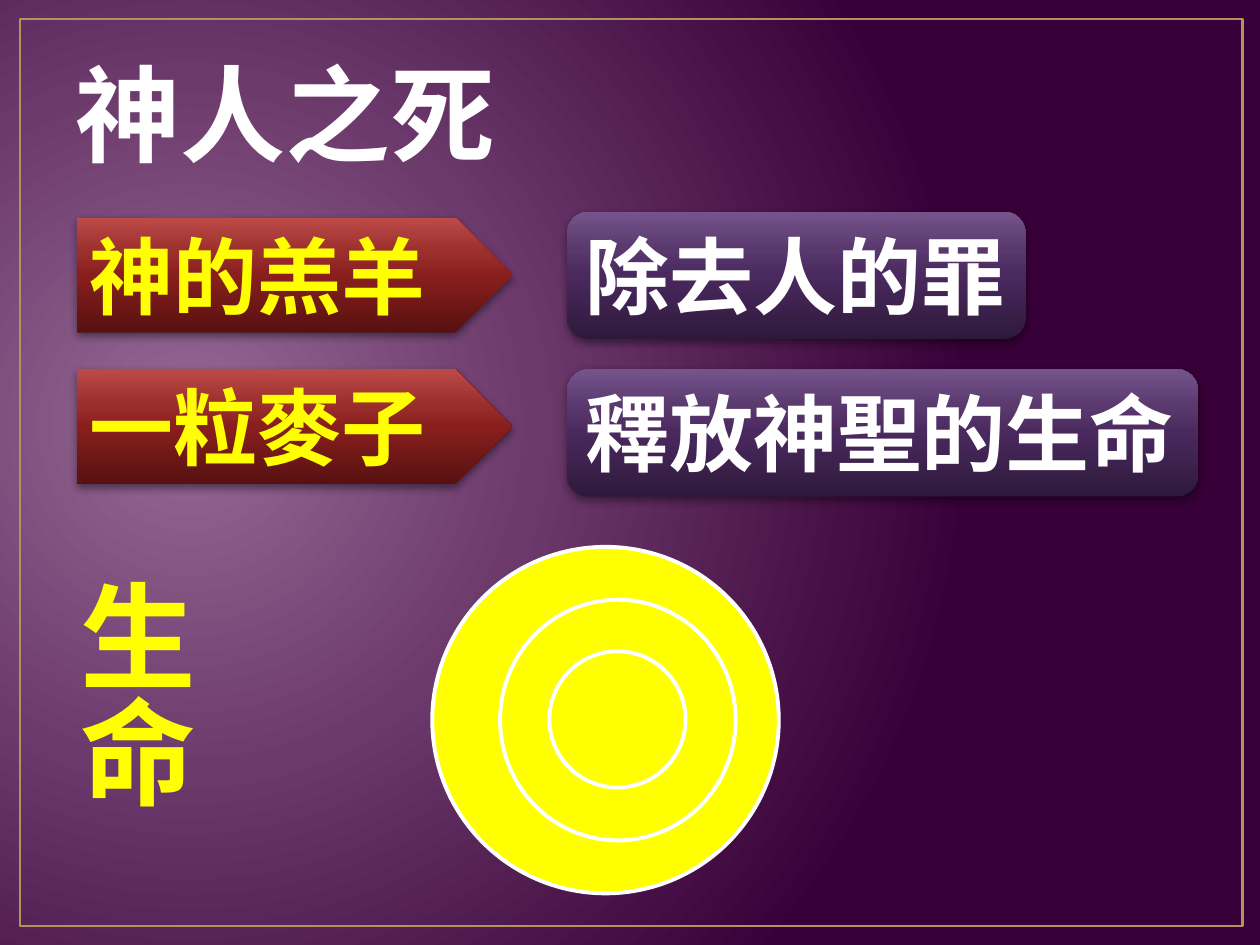
from lxml import etree
from pptx import Presentation
from pptx import util as u
from pptx.dml.color import RGBColor
from pptx.enum import shapes, text
from pptx.oxml import ns

Pt = u.Pt
WHITE = RGBColor(0xFF, 0xFF, 0xFF)
YELLOW = RGBColor(0xFF, 0xFF, 0x00)
GOLD = RGBColor(0xB2, 0x93, 0x5C)
BLACK = RGBColor(0x00, 0x00, 0x00)
BACKGROUND = [(0, RGBColor(0x94, 0x68, 0x94)), (100, RGBColor(0x38, 0x00, 0x38))]
PURPLE = [(0, RGBColor(0x2E, 0x19, 0x3B)), (50, RGBColor(0x4A, 0x29, 0x5E)),
          (70, RGBColor(0x58, 0x38, 0x6D)), (100, RGBColor(0x74, 0x54, 0x8A))]
RED = [(0, RGBColor(0x57, 0x11, 0x10)), (50, RGBColor(0x89, 0x1F, 0x1D)),
       (70, RGBColor(0x9B, 0x2F, 0x2C)), (100, RGBColor(0xBC, 0x4A, 0x48))]
LINEAR = '<a:lin ang="16200000" scaled="0"/>'
RADIAL = '<a:path path="circle"><a:fillToRect l="15000" t="50000" r="85000" b="60000"/></a:path>'


def set_gradient(fill, owner, stops, direction):
    fill.gradient()
    gradient = owner.find(".//" + ns.qn("a:gradFill"))
    stop_list = "".join(
        f'<a:gs pos="{position * 1000}"><a:srgbClr val="{color}"/></a:gs>'
        for position, color in stops)
    gradient.getparent().replace(gradient, etree.fromstring(
        f'<a:gradFill {ns.nsdecls("a")} rotWithShape="1">'
        f'<a:gsLst>{stop_list}</a:gsLst>{direction}</a:gradFill>'))


def write_text(shape, words, size, font, color, wrap, alignment=text.PP_ALIGN.LEFT):
    frame = shape.text_frame
    frame.word_wrap = wrap
    frame.auto_size = text.MSO_AUTO_SIZE.SHAPE_TO_FIT_TEXT
    frame.vertical_anchor = text.MSO_ANCHOR.TOP
    paragraph = frame.paragraphs[0]
    paragraph.alignment = alignment
    run = paragraph.add_run()
    run.text = words
    run.font.size = Pt(size)
    run.font.name = font
    run.font.bold = True
    run.font.color.rgb = color


presentation = Presentation()
presentation.slide_width, presentation.slide_height = Pt(720), Pt(540)
slide = presentation.slides.add_slide(presentation.slide_layouts[6])

# Background and gold frame
set_gradient(slide.background.fill, slide.element, BACKGROUND, RADIAL)
border = slide.shapes.add_shape(
    shapes.MSO_SHAPE.RECTANGLE, Pt(11.5), Pt(10.8), Pt(698.4), Pt(518.4))
border.shadow.inherit = False
border.fill.background()
border.line.color.rgb = GOLD
border.line.width = Pt(1.5)

# Title
title = slide.shapes.add_textbox(Pt(36), Pt(24.5), Pt(257), Pt(79.9))
write_text(title, "神人之死", 60, "Times New Roman", WHITE, False)

# Arrows on the left, what each achieves on the right
PLATE, ROUNDED = shapes.MSO_SHAPE.PENTAGON, shapes.MSO_SHAPE.ROUNDED_RECTANGLE
panels = [
    (ROUNDED, 324, 121, 262.1, 72.7, PURPLE, WHITE, "除去人的罪"),
    (ROUNDED, 324, 211, 360.7, 72.7, PURPLE, WHITE, "釋放神聖的生命"),
    (PLATE, 43.9, 124.5, 249.1, 65.5, RED, YELLOW, "神的羔羊"),
    (PLATE, 43.9, 211, 249.1, 65.5, RED, YELLOW, "一粒麥子"),
]
for kind, left, top, width, height, stops, color, words in panels:
    panel = slide.shapes.add_shape(kind, Pt(left), Pt(top), Pt(width), Pt(height))
    set_gradient(panel.fill, panel.element, stops, LINEAR)
    panel.line.fill.background()
    panel.shadow.inherit = False
    panel.element.spPr.find(ns.qn("a:effectLst")).append(etree.fromstring(
        f'<a:outerShdw {ns.nsdecls("a")} blurRad="{Pt(5)}" dist="{Pt(2)}" dir="5400000" '
        f'rotWithShape="0"><a:srgbClr val="{BLACK}"><a:alpha val="43000"/></a:srgbClr>'
        '</a:outerShdw>'))
    write_text(panel, words, 48, "Cabin", color, kind == PLATE)

# Vertical label
label = slide.shapes.add_textbox(Pt(25.2), Pt(324), Pt(94.3), Pt(167.8))
write_text(label, "生命", 66, "Times New Roman", YELLOW, True, text.PP_ALIGN.CENTER)
label.text_frame._txBody.bodyPr.set("vert", "eaVert")

# Rings, from the outside in
for left, top, width, height in [
        (247, 312.5, 198, 198), (285.8, 342.7, 134.6, 137.5), (313.9, 372.2, 77.8, 77.8)]:
    ring = slide.shapes.add_shape(
        shapes.MSO_SHAPE.OVAL, Pt(left), Pt(top), Pt(width), Pt(height))
    ring.shadow.inherit = False
    ring.fill.solid()
    ring.fill.fore_color.rgb = YELLOW
    ring.line.color.rgb = WHITE
    ring.line.width = Pt(2.25)

presentation.save("out.pptx")
